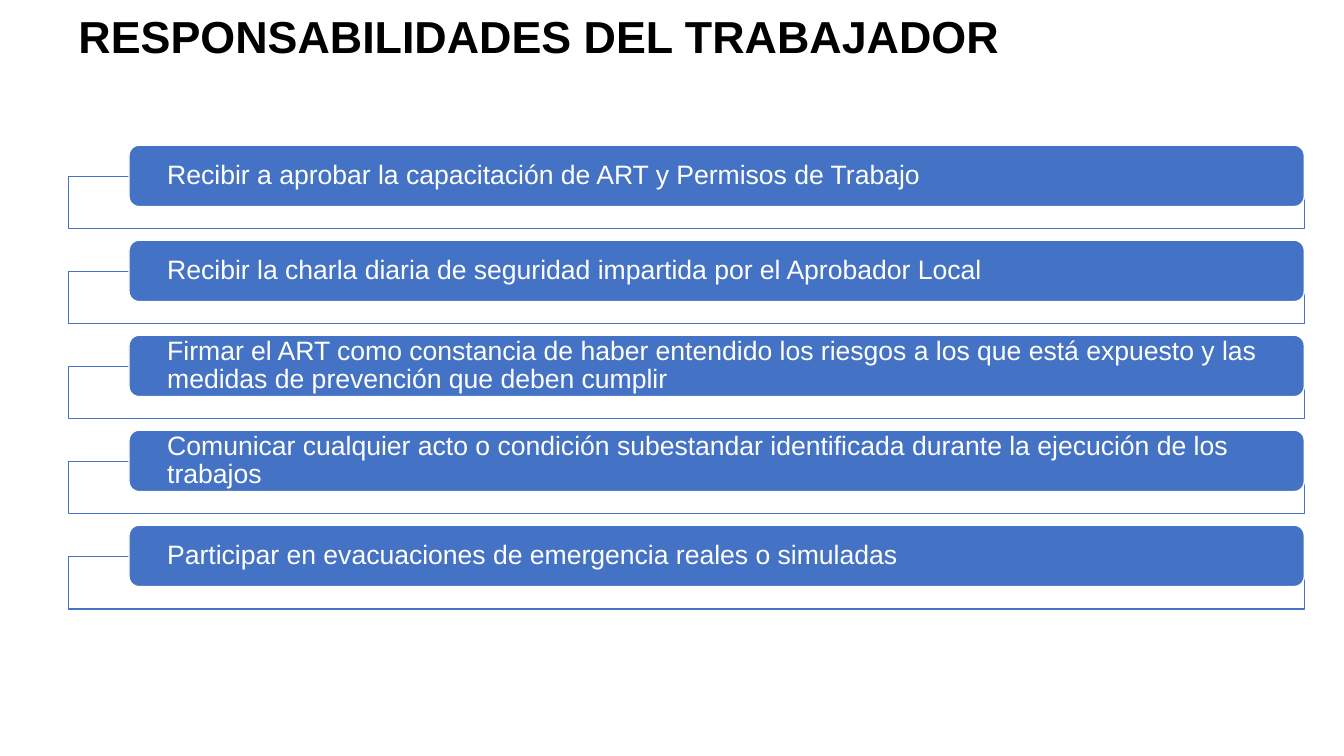
"""Build the slide on the worker's responsibilities as a list of five framed bars."""
import pptx
import pptx.dml.color
import pptx.enum.shapes
import pptx.enum.text
import pptx.oxml
import pptx.oxml.ns
import pptx.util

Inches, Pt = pptx.util.Inches, pptx.util.Pt
SHAPES = pptx.enum.shapes.MSO_SHAPE
ANCHOR = pptx.enum.text.MSO_ANCHOR
BLUE, WHITE, BLACK = "4472C4", "FFFFFF", "000000"
LEFT, RIGHT = 0.68, 12.94
FIRST_ROW, ROW_PITCH = 1.44, 0.9425
BAR_INDENT, BAR_HEIGHT = 0.6, 0.61
FRAME_DROP, FRAME_HEIGHT = 0.31, 0.52

duties = [
    "Recibir a aprobar la capacitación de ART y Permisos de Trabajo",
    "Recibir la charla diaria de seguridad impartida por el Aprobador Local",
    "Firmar el ART como constancia de haber entendido los riesgos a los que está expuesto "
    "y las medidas de prevención que deben cumplir",
    "Comunicar cualquier acto o condición subestandar identificada durante la ejecución "
    "de los trabajos",
    "Participar en evacuaciones de emergencia reales o simuladas",
]


def paint(colour_format, colour):
    """Apply a hex colour to a fill, line or font."""
    colour_format.rgb = pptx.dml.color.RGBColor.from_string(colour)


def write(shape, text, size, colour, margins, anchor, bold=False):
    """Put one left-aligned line of text into a shape."""
    frame = shape.text_frame
    frame.word_wrap = True
    frame.vertical_anchor = anchor
    frame.margin_left = frame.margin_right = Inches(margins[0])
    frame.margin_top = frame.margin_bottom = Inches(margins[1])
    paragraph = frame.paragraphs[0]
    paragraph.alignment = pptx.enum.text.PP_ALIGN.LEFT
    paragraph.line_spacing = 0.9
    run = paragraph.add_run()
    run.text = text
    run.font.name, run.font.size, run.font.bold = "Arial", Pt(size), bold
    paint(run.font.color, colour)


deck = pptx.Presentation()
deck.slide_width, deck.slide_height = Inches(13.333), Inches(7.5)
slide = deck.slides.add_slide(deck.slide_layouts[6])

title = slide.shapes.add_textbox(Inches(LEFT), Inches(0.1), Inches(12.65), Inches(0.98))
write(title, "RESPONSABILIDADES DEL TRABAJADOR", 32, BLACK, (0.1, 0.05), ANCHOR.TOP, True)

for row, duty in enumerate(duties):
    top = FIRST_ROW + row * ROW_PITCH
    bar_left = LEFT + BAR_INDENT
    frame = slide.shapes.add_shape(
        SHAPES.RECTANGLE, Inches(LEFT), Inches(top + FRAME_DROP),
        Inches(RIGHT - LEFT), Inches(FRAME_HEIGHT))
    bar = slide.shapes.add_shape(
        SHAPES.ROUNDED_RECTANGLE, Inches(bar_left), Inches(top),
        Inches(RIGHT - bar_left), Inches(BAR_HEIGHT))
    for shape, fill, line in ((frame, WHITE, BLUE), (bar, BLUE, WHITE)):
        shape.shadow.inherit = False
        shape.fill.solid()
        paint(shape.fill.fore_color, fill)
        paint(shape.line.color, line)
        shape.line.width = Pt(1)
    frame_fill = frame.fill._xPr.find(pptx.oxml.ns.qn("a:solidFill"))
    frame_fill[0].append(pptx.oxml.parse_xml(
        f'<a:alpha {pptx.oxml.ns.nsdecls("a")} val="90000"/>'))
    write(bar, duty, 19, WHITE, (0.35, 0.03), ANCHOR.MIDDLE)

deck.save("out.pptx")
